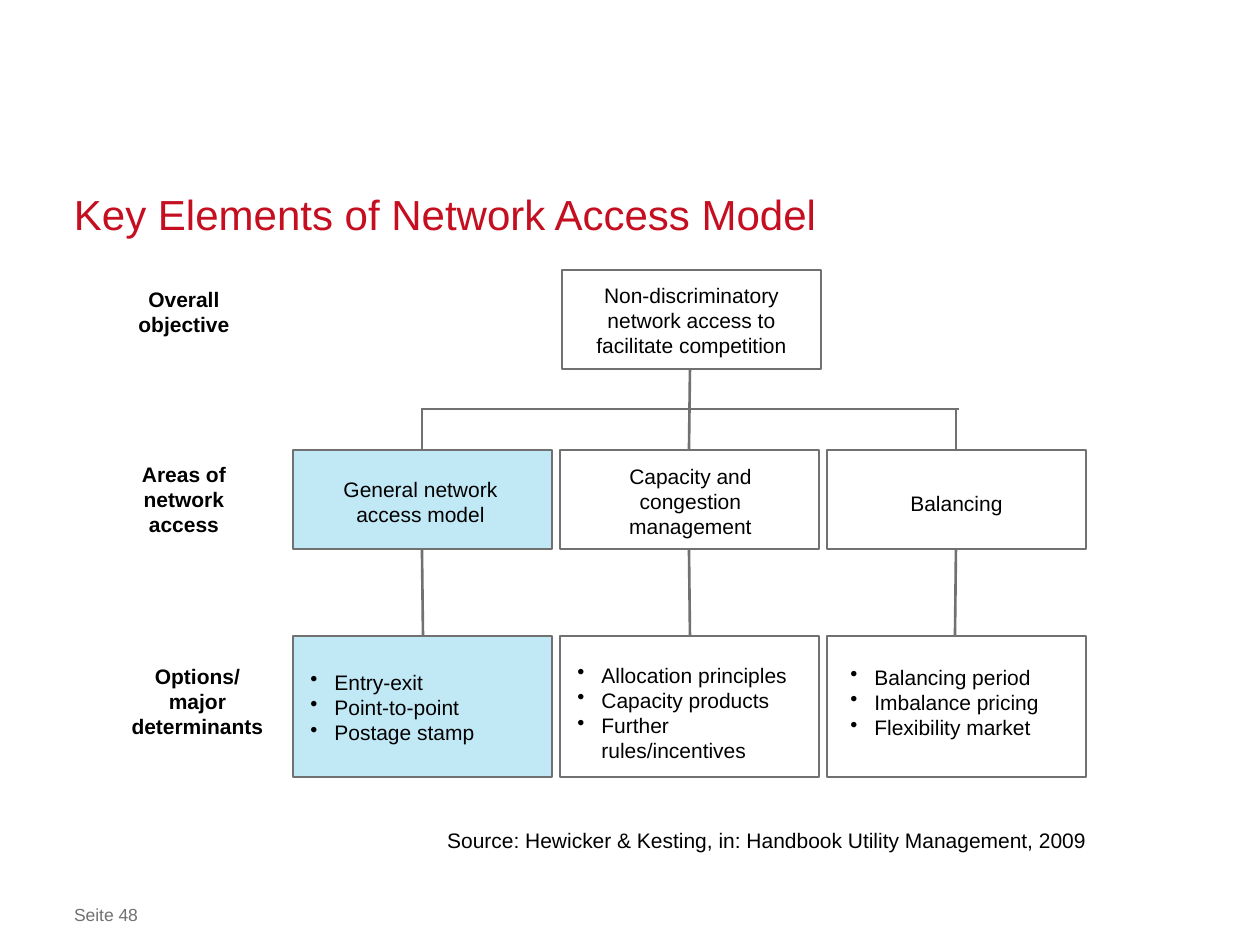
from dataclasses import dataclass

import pptx
import pptx.dml.color
import pptx.enum.shapes
import pptx.enum.text
import pptx.oxml.ns
import pptx.util
from lxml import etree

RGBColor = pptx.dml.color.RGBColor
Align = pptx.enum.text.PP_ALIGN
Anchor = pptx.enum.text.MSO_ANCHOR

RED = RGBColor(0xC5, 0x0E, 0x1F)
GREY = RGBColor(0x71, 0x71, 0x71)
BLACK = RGBColor(0, 0, 0)
WHITE = RGBColor(0xFF, 0xFF, 0xFF)
LIGHT_BLUE = RGBColor(0xC1, 0xE8, 0xF5)

FONT = "Arial"
PX_PER_INCH = 126
BULLET_INDENT = 24

# Grid of the diagram, in px
COLUMN_LEFTS = [293 + 267 * column for column in range(3)]
BOX_WIDTH, BOX_HEIGHT, OPTIONS_HEIGHT = 259, 99, 141
OBJECTIVE_TOP, AREA_TOP, OPTIONS_TOP = 270, 450, 636
BRANCH_Y = 409


@dataclass
class Area:
    """A rectangle in px."""
    left: int
    top: int
    width: int
    height: int


@dataclass
class Label:
    """Text lines, one paragraph each, and how they look."""
    area: Area
    lines: list[str]
    size: int = 12
    color: RGBColor = BLACK
    fill: RGBColor | None = WHITE
    bold: bool = False
    bullets: bool = False
    align: Align = Align.CENTER
    anchor: Anchor = Anchor.TOP
    padded: bool = True
    line_points: int | None = None


@dataclass
class Frame:
    """An outlined box with its text on top."""
    area: Area
    label: Label


def emu(px: int) -> int:
    return round(px * pptx.util.Inches(1) / PX_PER_INCH)


def place(area: Area) -> list[int]:
    return [emu(v) for v in (area.left, area.top, area.width, area.height)]


def add_bullet(para) -> None:
    properties = para._p.get_or_add_pPr()
    properties.set("marL", str(emu(BULLET_INDENT)))
    properties.set("indent", str(-emu(BULLET_INDENT)))
    bullet = etree.SubElement(properties, pptx.oxml.ns.qn("a:buChar"))
    bullet.set("char", "•")


def add_label(page, label: Label) -> None:
    box = page.shapes.add_textbox(*place(label.area))
    if label.fill is not None:
        box.fill.solid()
        box.fill.fore_color.rgb = label.fill
    frame = box.text_frame
    frame.word_wrap = True
    frame.vertical_anchor = label.anchor
    if not label.padded:
        frame.margin_left = frame.margin_right = 0
        frame.margin_top = frame.margin_bottom = 0
    for index, line in enumerate(label.lines):
        para = frame.add_paragraph() if index else frame.paragraphs[0]
        para.alignment = Align.LEFT if label.bullets else label.align
        if label.line_points:
            para.line_spacing = pptx.util.Pt(label.line_points)
        if label.bullets:
            add_bullet(para)
        span = para.add_run()
        span.text = line
        span.font.name = FONT
        span.font.size = pptx.util.Pt(label.size)
        span.font.bold = label.bold
        span.font.color.rgb = label.color


def add_frame(page, frame: Frame) -> None:
    box = page.shapes.add_shape(
        pptx.enum.shapes.MSO_SHAPE.RECTANGLE, *place(frame.area))
    box.shadow.inherit = False
    box.fill.solid()
    box.fill.fore_color.rgb = frame.label.fill
    box.line.color.rgb = GREY
    box.line.width = pptx.util.Pt(0.75)
    add_label(page, frame.label)


def add_line(page, x1: int, y1: int, x2: int, y2: int) -> None:
    line = page.shapes.add_connector(
        pptx.enum.shapes.MSO_CONNECTOR.STRAIGHT,
        emu(x1), emu(y1), emu(x2), emu(y2))
    line.line.color.rgb = GREY
    line.line.width = pptx.util.Pt(1.5)
    etree.SubElement(line._element.spPr, pptx.oxml.ns.qn("a:effectLst"))


def area_box(column: int) -> Area:
    return Area(COLUMN_LEFTS[column], AREA_TOP, BOX_WIDTH, BOX_HEIGHT)


def options_box(column: int) -> Area:
    return Area(COLUMN_LEFTS[column], OPTIONS_TOP, BOX_WIDTH, OPTIONS_HEIGHT)


FRAMES = [
    # Overall objective
    Frame(Area(562, OBJECTIVE_TOP, BOX_WIDTH, BOX_HEIGHT),
          Label(Area(581, 276, 221, 90),
                ["Non-discriminatory network access to facilitate competition"])),
    # Areas of network access
    Frame(area_box(0), Label(Area(310, 470, 221, 63),
                             ["General network access model"], fill=LIGHT_BLUE)),
    Frame(area_box(1), Label(Area(580, 457, 221, 90),
                             ["Capacity and congestion management"])),
    Frame(area_box(2), Label(Area(846, 484, 221, 38), ["Balancing"])),
    # Options
    Frame(options_box(0),
          Label(Area(298, 663, 248, 90),
                ["Entry-exit", "Point-to-point", "Postage stamp"],
                fill=LIGHT_BLUE, bullets=True)),
    Frame(options_box(1),
          Label(Area(565, 656, 248, 115),
                ["Allocation principles", "Capacity products",
                 "Further rules/incentives"], bullets=True)),
    Frame(options_box(2),
          Label(Area(838, 658, 238, 90),
                ["Balancing period", "Imbalance pricing", "Flexibility market"],
                bullets=True)),
]

LABELS = [
    # Title and page number
    Label(Area(74, 186, 1111, 53), ["Key Elements of Network Access Model"],
          size=24, color=RED, fill=None, align=Align.LEFT,
          anchor=Anchor.BOTTOM, padded=False, line_points=30),
    Label(Area(74, 904, 912, 21), ["Seite 48"], size=10, color=GREY,
          fill=None, align=Align.LEFT, padded=False),
    # Row captions
    Label(Area(83, 280, 202, 63), ["Overall", "objective"], bold=True),
    Label(Area(83, 455, 202, 90), ["Areas of", "network", "access"], bold=True),
    Label(Area(110, 657, 175, 90), ["Options/", "major", "determinants"],
          bold=True),
    # Source line
    Label(Area(428, 821, 678, 38),
          ["Source: Hewicker & Kesting, in: Handbook Utility Management, 2009"]),
]


def main() -> None:
    deck = pptx.Presentation()
    deck.slide_width = pptx.util.Inches(10)
    deck.slide_height = pptx.util.Inches(7.5)
    page = deck.slides.add_slide(deck.slide_layouts[6])

    for frame in FRAMES:
        add_frame(page, frame)
    for label in LABELS:
        add_label(page, label)

    # Tree: branch, trunk, then a line down through each column
    centers = [left + BOX_WIDTH // 2 for left in COLUMN_LEFTS]
    add_line(page, centers[0], BRANCH_Y, centers[2] + 3, BRANCH_Y)
    add_line(page, centers[1] + 1, OBJECTIVE_TOP + BOX_HEIGHT,
             centers[1], AREA_TOP)
    for center in (centers[0], centers[2]):
        add_line(page, center, BRANCH_Y - 1, center, AREA_TOP)
    for center, drift in zip(centers, (1, 1, -1)):
        add_line(page, center, AREA_TOP + BOX_HEIGHT,
                 center + drift, OPTIONS_TOP)

    deck.save("out.pptx")


if __name__ == "__main__":
    main()
